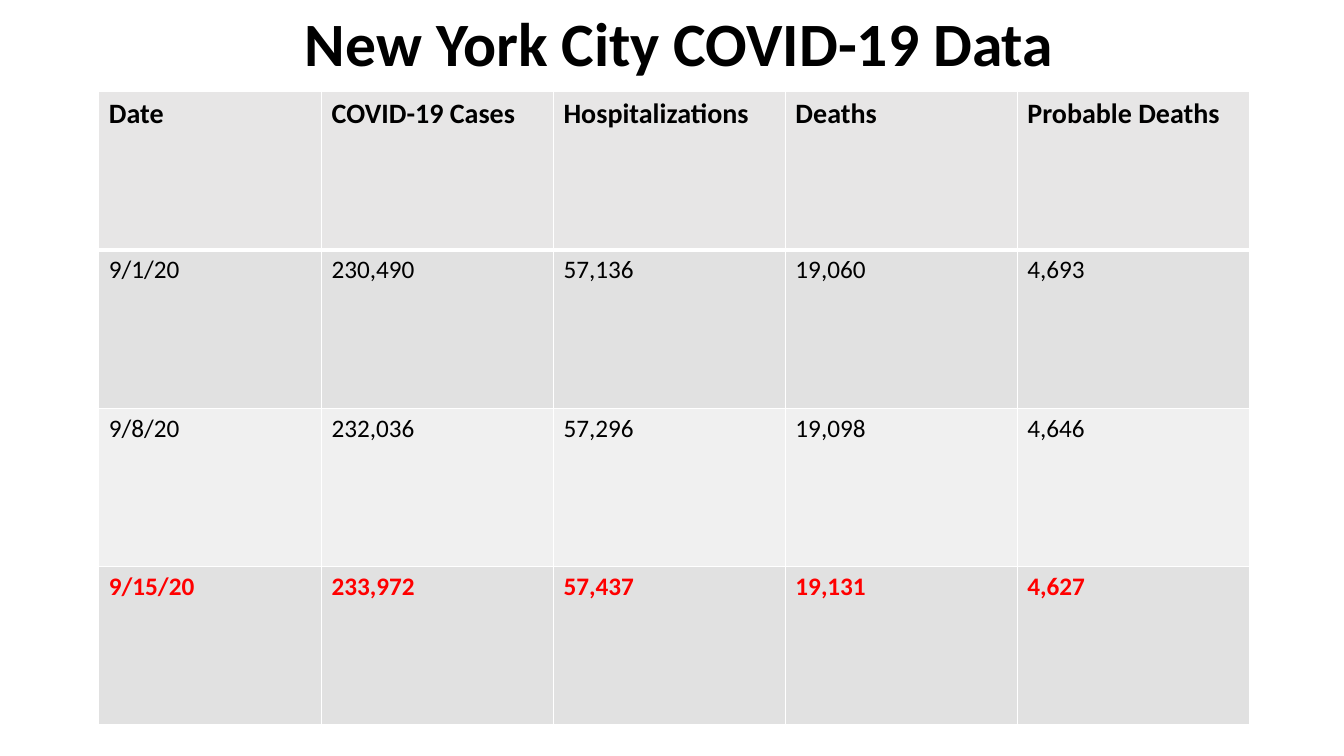
from dataclasses import dataclass

from lxml import etree
from pptx import Presentation
from pptx.dml.color import RGBColor
from pptx.enum import text
from pptx.oxml import ns
from pptx.util import Inches, Pt


@dataclass(frozen=True)
class Theme:
    font: str = "Calibri"
    ink: str = "000000"
    alert: str = "FF0000"
    border: str = "FFFFFF"
    header_fill: str = "E7E6E6"
    bands: tuple = ("E1E1E1", "F0F0F0")
    title_size: int = 44
    header_size: int = 20
    body_size: int = 18


THEME = Theme()

ROWS = [
    ("Date", "COVID-19 Cases", "Hospitalizations", "Deaths", "Probable Deaths"),
    ("9/1/20", "230,490", "57,136", "19,060", "4,693"),
    ("9/8/20", "232,036", "57,296", "19,098", "4,646"),
    ("9/15/20", "233,972", "57,437", "19,131", "4,627"),
]
COL_WIDTHS = (2.21, 2.3, 2.3, 2.3, 2.3)
ROW_HEIGHT = 1.57


def style_paragraph(p, size, color, bold):
    p.font.name = THEME.font
    p.font.size = Pt(size)
    p.font.bold = bold
    p.font.color.rgb = RGBColor.from_string(color)


def add_title(slide, title):
    sp = slide.shapes.title
    sp.left, sp.top = Inches(0.99), Inches(-0.26)
    sp.width, sp.height = Inches(11.5), Inches(1.45)
    tf = sp.text_frame
    tf.text = title
    tf.word_wrap = True
    tf.vertical_anchor = text.MSO_ANCHOR.MIDDLE
    p = tf.paragraphs[0]
    p.alignment = text.PP_ALIGN.CENTER
    p.line_spacing = 0.9
    style_paragraph(p, THEME.title_size, THEME.ink, True)


def set_borders(cell, top, bottom):
    """Draw the cell's edges; the side edges are always 1 pt."""
    tc_pr = cell._tc.get_or_add_tcPr()
    edges = (("a:lnL", 1), ("a:lnR", 1), ("a:lnT", top), ("a:lnB", bottom))
    for i, (tag, width) in enumerate(edges):
        ln = etree.Element(ns.qn(tag), w=str(Pt(width)))
        fill = etree.SubElement(ln, ns.qn("a:solidFill"))
        etree.SubElement(fill, ns.qn("a:srgbClr"), val=THEME.border)
        tc_pr.insert(i, ln)


def row_style(row):
    """Return fill, type size, text colour and weight for a row."""
    if row == 0:
        return THEME.header_fill, THEME.header_size, THEME.ink, True
    latest = row == len(ROWS) - 1
    color = THEME.alert if latest else THEME.ink
    return THEME.bands[(row - 1) % 2], THEME.body_size, color, latest


def add_data_table(slide):
    frame = slide.shapes.add_table(
        len(ROWS), len(COL_WIDTHS), Inches(0.98), Inches(0.91),
        Inches(sum(COL_WIDTHS)), Inches(ROW_HEIGHT * len(ROWS)))
    table = frame.table
    for column, width in zip(table.columns, COL_WIDTHS):
        column.width = Inches(width)
    for r, values in enumerate(ROWS):
        table.rows[r].height = Inches(ROW_HEIGHT)
        fill, size, color, bold = row_style(r)
        for c, value in enumerate(values):
            cell = table.cell(r, c)
            cell.text = value
            style_paragraph(cell.text_frame.paragraphs[0], size, color, bold)
            cell.fill.solid()
            cell.fill.fore_color.rgb = RGBColor.from_string(fill)
            # Heavier rule between header and body
            set_borders(cell, 3 if r == 1 else 1, 3 if r == 0 else 1)


def main():
    prs = Presentation()
    prs.slide_width, prs.slide_height = Inches(13.33), Inches(7.5)
    slide = prs.slides.add_slide(prs.slide_layouts.get_by_name("Title Only"))
    add_title(slide, "New York City COVID-19 Data")
    add_data_table(slide)
    prs.save("out.pptx")


if __name__ == "__main__":
    main()
